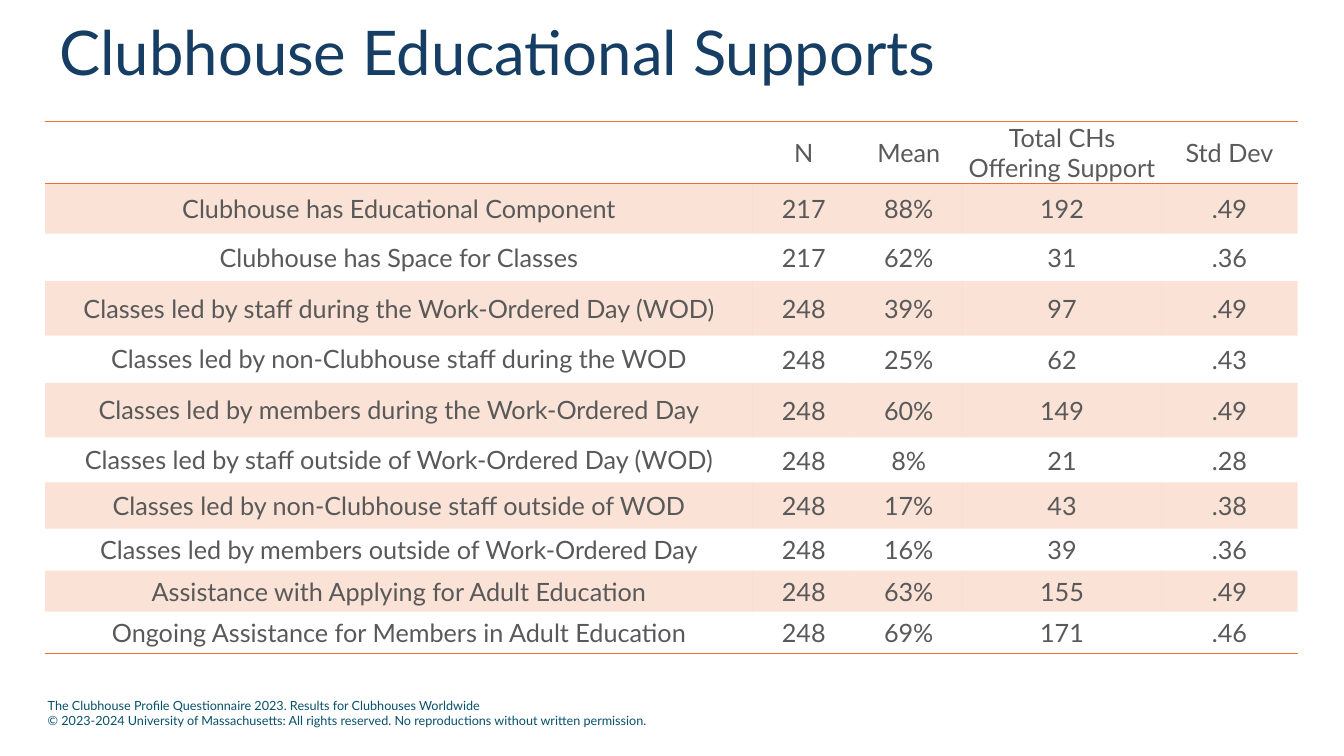
from lxml import etree
from pptx import Presentation
from pptx.dml.color import RGBColor
from pptx.enum.text import MSO_ANCHOR as Anchor, PP_ALIGN as Align
from pptx.oxml.ns import qn
from pptx.util import Pt

PX = 9525  # EMU per pixel at 96 pixels to the inch
NAVY = RGBColor(0x16, 0x3E, 0x64)
TEAL = RGBColor(0x08, 0x4F, 0x6A)
GREY = RGBColor(0x59, 0x59, 0x59)
ORANGE = RGBColor(0xE9, 0x71, 0x32)
NO_STYLE = "{2D5ABB26-0587-4C30-8999-92F81FD0307C}"

COLUMN_WIDTHS = [674, 97, 103, 189, 130]
ROW_HEIGHTS = [58, 48, 45, 52, 45, 52, 43, 44, 40, 39, 40]
ROWS = [
    ("", "N", "Mean", "Total CHs Offering Support", "Std Dev"),
    ("Clubhouse has Educational Component", "217", "88%", "192", ".49"),
    ("Clubhouse has Space for Classes", "217", "62%", "31", ".36"),
    ("Classes led by staff during the Work-Ordered Day (WOD)", "248", "39%", "97", ".49"),
    ("Classes led by non-Clubhouse staff during the WOD", "248", "25%", "62", ".43"),
    ("Classes led by members during the Work-Ordered Day", "248", "60%", "149", ".49"),
    ("Classes led by staff outside of Work-Ordered Day (WOD)", "248", "8%", "21", ".28"),
    ("Classes led by non-Clubhouse staff outside of WOD", "248", "17%", "43", ".38"),
    ("Classes led by members outside of Work-Ordered Day", "248", "16%", "39", ".36"),
    ("Assistance with Applying for Adult Education", "248", "63%", "155", ".49"),
    ("Ongoing Assistance for Members in Adult Education", "248", "69%", "171", ".46"),
]
LAST_ROW = len(ROWS) - 1


def write(frame, text, size, color, align=Align.LEFT, anchor=Anchor.MIDDLE, spacing=None):
    """Fill a text frame, one paragraph for each line of text."""
    frame.word_wrap = True
    frame.vertical_anchor = anchor
    for index, line in enumerate(text.split("\n")):
        para = frame.paragraphs[0] if index == 0 else frame.add_paragraph()
        para.alignment = align
        para.line_spacing = spacing
        span = para.add_run()
        span.text = line
        span.font.name = "Lato"
        span.font.size = Pt(size)
        span.font.color.rgb = color


def add_borders(cell, sides):
    """Draw orange lines on the given sides, in the order lnT, lnB."""
    properties = cell._tc.get_or_add_tcPr()
    for position, side in enumerate(sides):
        line = etree.Element(qn(f"a:{side}"), w=str(Pt(1)))
        fill = etree.SubElement(line, qn("a:solidFill"))
        etree.SubElement(fill, qn("a:srgbClr"), val=str(ORANGE))
        properties.insert(position, line)


deck = Presentation()
deck.slide_width = 1280 * PX
deck.slide_height = 720 * PX
page = deck.slides.add_slide(deck.slide_layouts[6])

title = page.shapes.add_textbox(47 * PX, 23 * PX, 1104 * PX, 59 * PX)
write(title.text_frame, "Clubhouse Educational Supports", 44, NAVY, spacing=0.9)

table_frame = page.shapes.add_table(
    len(ROWS), len(COLUMN_WIDTHS), 43 * PX, 116 * PX,
    sum(COLUMN_WIDTHS) * PX, sum(ROW_HEIGHTS) * PX)
table = table_frame.table
table.first_row = False
table.horz_banding = False
table_frame.element.find(".//" + qn("a:tableStyleId")).text = NO_STYLE

for column, width in zip(table.columns, COLUMN_WIDTHS):
    column.width = width * PX
for row, height in zip(table.rows, ROW_HEIGHTS):
    row.height = height * PX

for row_index, values in enumerate(ROWS):
    for column_index, value in enumerate(values):
        cell = table.cell(row_index, column_index)
        cell.vertical_anchor = Anchor.MIDDLE
        roomy = column_index == 0 and 3 <= row_index <= 8
        if not roomy:
            cell.margin_left = cell.margin_right = cell.margin_top = PX
            cell.margin_bottom = 0
        if value:
            write(cell.text_frame, value, 18, GREY, align=Align.CENTER, anchor=None)
        if row_index % 2:
            cell.fill.solid()
            cell.fill.fore_color.rgb = ORANGE
            tint = cell._tc.tcPr.find(".//" + qn("a:srgbClr"))
            etree.SubElement(tint, qn("a:alpha"), val="20000")
        else:
            cell.fill.background()
        if row_index == 0:
            add_borders(cell, ["lnT", "lnB"])
        elif row_index == LAST_ROW:
            add_borders(cell, ["lnB"])

footer = page.shapes.add_textbox(36 * PX, 658 * PX, 672 * PX, 40 * PX)
write(footer.text_frame,
      "The Clubhouse Profile Questionnaire 2023. Results for Clubhouses Worldwide\n"
      "© 2023-2024 University of Massachusetts: All rights reserved. "
      "No reproductions without written permission.",
      9, TEAL, anchor=Anchor.BOTTOM)

deck.save("out.pptx")
